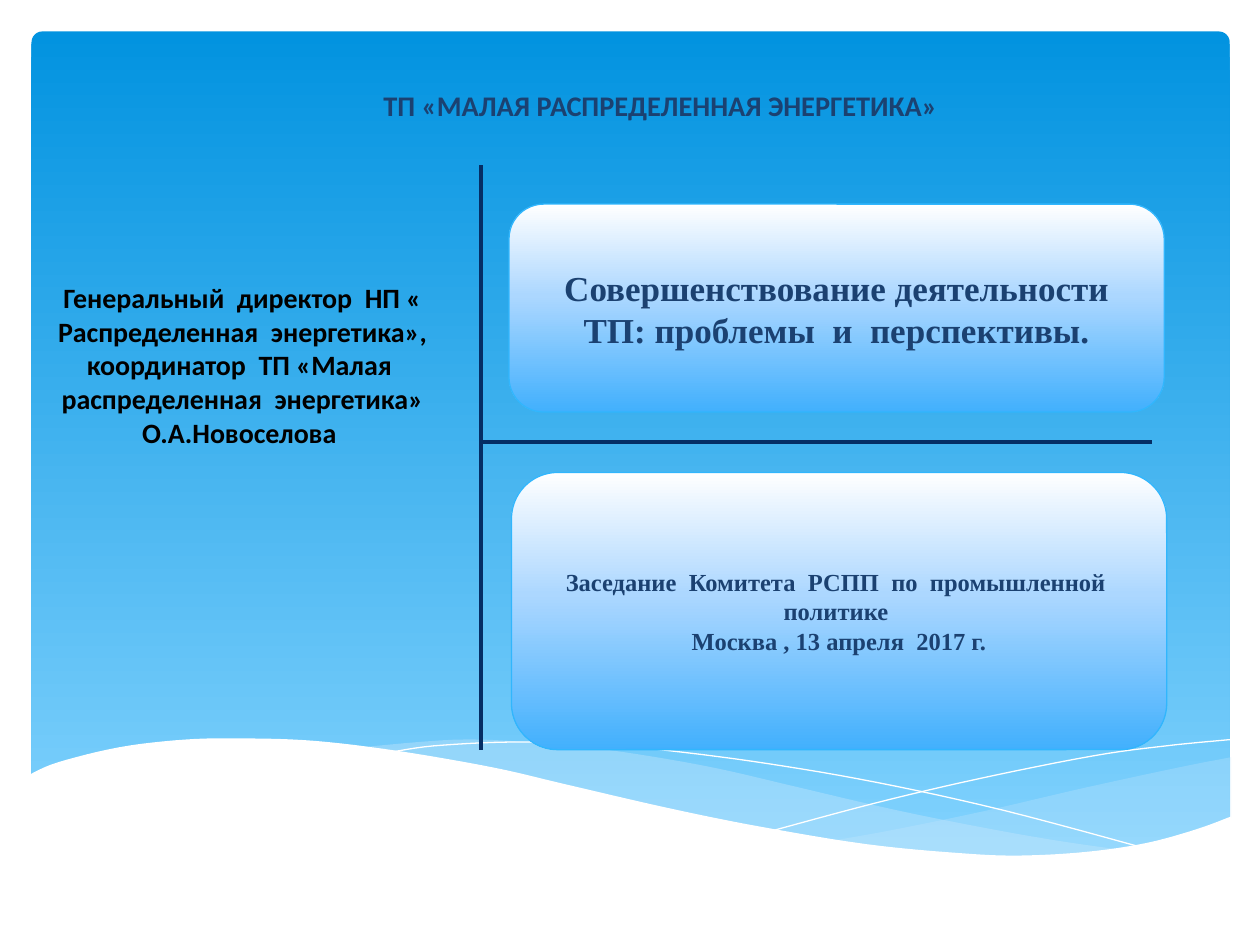
from dataclasses import dataclass

from lxml import etree
from pptx import Presentation
from pptx.dml.color import RGBColor
from pptx.enum.shapes import MSO_CONNECTOR, MSO_SHAPE
from pptx.enum.text import MSO_ANCHOR, PP_ALIGN
from pptx.oxml.ns import qn
from pptx.util import Inches, Pt

ROUNDED, STRAIGHT = MSO_SHAPE.ROUNDED_RECTANGLE, MSO_CONNECTOR.STRAIGHT
TOP, MIDDLE, BOTTOM = MSO_ANCHOR.TOP, MSO_ANCHOR.MIDDLE, MSO_ANCHOR.BOTTOM
CENTER = PP_ALIGN.CENTER


@dataclass(frozen=True)
class Theme:
    white: str = "FFFFFF"
    black: str = "000000"
    ink: str = "1B4171"
    rule: str = "052E65"
    border: str = "31B6FD"
    wave: str = "C6E7FC"
    sky: tuple = ((0, "0293E0"), (100, "83D3FE"))
    glass: tuple = ((0, "FFFFFF"), (44, "ACD7FF"), (100, "42B0FD"))
    sans: str = "Calibri"
    serif: str = "Times New Roman"
    title_size: float = 16.2
    speaker_size: int = 16
    topic_size: int = 20
    event_size: int = 14


THEME = Theme()
WIDTH, HEIGHT = 10, 7.5

TITLE = "ТП «МАЛАЯ РАСПРЕДЕЛЕННАЯ ЭНЕРГЕТИКА»"
SPEAKER = ("Генеральный  директор  НП « Распределенная  энергетика», "
           "координатор  ТП «Малая  распределенная  энергетика» О.А.Новоселова ")
# Paragraphs, left, top, height, type size
CARDS = [
    (["Совершенствование деятельности ТП: проблемы  и  перспективы."],
     4.04, 1.62, 1.65, THEME.topic_size),
    (["Заседание  Комитета  РСПП  по  промышленной  политике ",
      "Москва , 13 апреля  2017 г."],
     4.06, 3.75, 2.2, THEME.event_size),
]
CARD_WIDTH = 5.2
RULE_X, RULE_Y = 3.82, 3.51
# Start, end, width
RULES = [((RULE_X, 1.31), (RULE_X, 5.95), 2.5),
         ((RULE_X, RULE_Y), (9.14, RULE_Y), 2.25)]

# Each wave is a list of edges; every edge becomes a smooth curve.
RIGHT_BAND = [
    [(9.77, 6.01), (9.36, 6.09), (8.62, 6.25), (7.8, 6.44), (7.07, 6.59), (6.62, 6.67)],
    [(6.62, 6.67), (7.06, 6.73), (7.58, 6.78), (8.04, 6.8), (8.55, 6.78),
     (9.07, 6.71), (9.44, 6.61), (9.77, 6.49)],
]
LONG_BAND = [
    [(8.94, 6.75), (8.38, 6.67), (7.76, 6.56), (7.07, 6.42), (6.3, 6.24), (5.7, 6.1),
     (5.15, 6), (4.65, 5.93), (4.2, 5.89), (3.62, 5.87), (2.87, 5.93)],
    [(2.87, 5.93), (3.43, 6.01), (4.05, 6.13), (4.5, 6.24), (5.3, 6.42), (6.02, 6.57),
     (6.81, 6.7), (7.37, 6.77), (7.97, 6.8), (8.49, 6.79), (8.94, 6.75)],
]
FALLING_LINE = [[(3.1, 5.97), (3.44, 5.92), (4.02, 5.89), (4.69, 5.9), (5.33, 5.96),
                 (6.09, 6.06), (6.96, 6.21), (7.96, 6.43), (9.08, 6.73)]]
RISING_LINE = [[(6.14, 6.59), (6.96, 6.37), (7.77, 6.18), (8.67, 6), (9.25, 5.92), (9.76, 5.87)]]
FOREGROUND = [
    [(0.23, 6.15), (0.46, 6.05), (0.95, 5.93), (1.46, 5.87), (1.93, 5.86), (2.5, 5.88),
     (3.16, 5.96), (3.91, 6.09), (4.47, 6.22), (5.29, 6.41), (6.03, 6.56), (6.88, 6.7),
     (7.61, 6.77), (8.09, 6.79), (8.63, 6.76), (9.1, 6.69), (9.5, 6.58), (9.77, 6.48)],
    [(9.77, 7.31), (0.23, 7.31)],
]
# Edges, fill opacity in percent (None means an open line)
WAVES = [(RIGHT_BAND, THEME.wave, 29), (LONG_BAND, THEME.wave, 40),
         (FALLING_LINE, THEME.white, None), (RISING_LINE, THEME.white, None),
         (FOREGROUND, THEME.white, 100)]


def rgb(value):
    return RGBColor.from_string(value)


def smooth(points, steps=6):
    """Return points along a Catmull-Rom curve through the given points."""
    padded = [points[0], *points, points[-1]]
    curve = [points[0]]
    for a, b, c, d in zip(padded, padded[1:], padded[2:], padded[3:]):
        for step in range(1, steps + 1):
            t = step / steps
            curve.append(tuple(
                q + t * (r - p + t * (2 * p - 5 * q + 4 * r - s
                                      + t * (3 * q - p - 3 * r + s))) / 2
                for p, q, r, s in zip(a, b, c, d)))
    return curve


def add_wave(shapes, edges, color, opacity):
    points = [(Inches(x), Inches(y)) for edge in edges
              for x, y in (smooth(edge) if len(edge) > 2 else edge)]
    builder = shapes.build_freeform(*points[0])
    builder.add_line_segments(points[1:], close=opacity is not None)
    shape = builder.convert_to_shape()
    shape.shadow.inherit = False
    if opacity is None:
        shape.fill.background()
        shape.line.color.rgb = rgb(color)
        shape.line.width = Pt(0)
        return
    shape.fill.solid()
    shape.fill.fore_color.rgb = rgb(color)
    shape.line.fill.background()
    if opacity < 100:
        color_element = shape._element.spPr.find(".//" + qn("a:srgbClr"))
        etree.SubElement(color_element, qn("a:alpha"), val=str(opacity * 1000))


def add_panel(shapes, left, top, width, height, stops, border=None):
    """Add a rounded rectangle with a gradient running from top to bottom."""
    shape = shapes.add_shape(ROUNDED, *map(Inches, (left, top, width, height)))
    shape.shadow.inherit = False
    shape.fill.gradient()
    shape.fill.gradient_angle = 270
    stop_list = shape._element.spPr.find(".//" + qn("a:gsLst"))
    for stop in list(stop_list):
        stop_list.remove(stop)
    for position, color in stops:
        stop = etree.SubElement(stop_list, qn("a:gs"), pos=str(position * 1000))
        etree.SubElement(stop, qn("a:srgbClr"), val=color)
    if border:
        shape.line.color.rgb = rgb(border)
        shape.line.width = Pt(0.75)
    else:
        shape.line.fill.background()
    return shape


def add_rule(shapes, start, end, width):
    rule = shapes.add_connector(STRAIGHT, *map(Inches, start + end))
    rule.line.color.rgb = rgb(THEME.rule)
    rule.line.width = Pt(width)
    etree.SubElement(rule._element.spPr, qn("a:effectLst"))


def write_text(shape, paragraphs, *, font, size, color, anchor=MIDDLE):
    frame = shape.text_frame
    frame.word_wrap = True
    frame.vertical_anchor = anchor
    frame.text = "\n".join(paragraphs)
    for paragraph in frame.paragraphs:
        paragraph.alignment = CENTER
        for run in paragraph.runs:
            run.font.name = font
            run.font.size = Pt(size)
            run.font.bold = True
            run.font.color.rgb = rgb(color)


def main():
    presentation = Presentation()
    presentation.slide_width, presentation.slide_height = Inches(WIDTH), Inches(HEIGHT)
    slide = presentation.slides.add_slide(presentation.slide_layouts[5])
    shapes = slide.shapes

    backdrop = add_panel(shapes, 0.25, 0.25, 9.51, 6.6, THEME.sky)
    backdrop.adjustments[0] = 0.013
    for wave in WAVES:
        add_wave(shapes, *wave)

    title = shapes.title
    shapes._spTree.append(title._element)  # bring in front of the backdrop
    title.left, title.top, title.width, title.height = map(Inches, (0.75, 0.6, 8.5, 0.47))
    write_text(title, [TITLE], font=THEME.sans, size=THEME.title_size,
               color=THEME.ink, anchor=BOTTOM)
    title.text_frame.margin_left = Inches(0.58)
    title.text_frame.margin_bottom = Inches(0.1)

    speaker = shapes.add_textbox(*map(Inches, (0.35, 2.18, 3.15, 2.93)))
    write_text(speaker, [SPEAKER], font=THEME.sans, size=THEME.speaker_size,
               color=THEME.black, anchor=TOP)

    for rule in RULES:
        add_rule(shapes, *rule)
    for paragraphs, left, top, height, size in CARDS:
        card = add_panel(shapes, left, top, CARD_WIDTH, height, THEME.glass, THEME.border)
        write_text(card, paragraphs, font=THEME.serif, size=size, color=THEME.ink)

    presentation.save("out.pptx")


if __name__ == "__main__":
    main()
